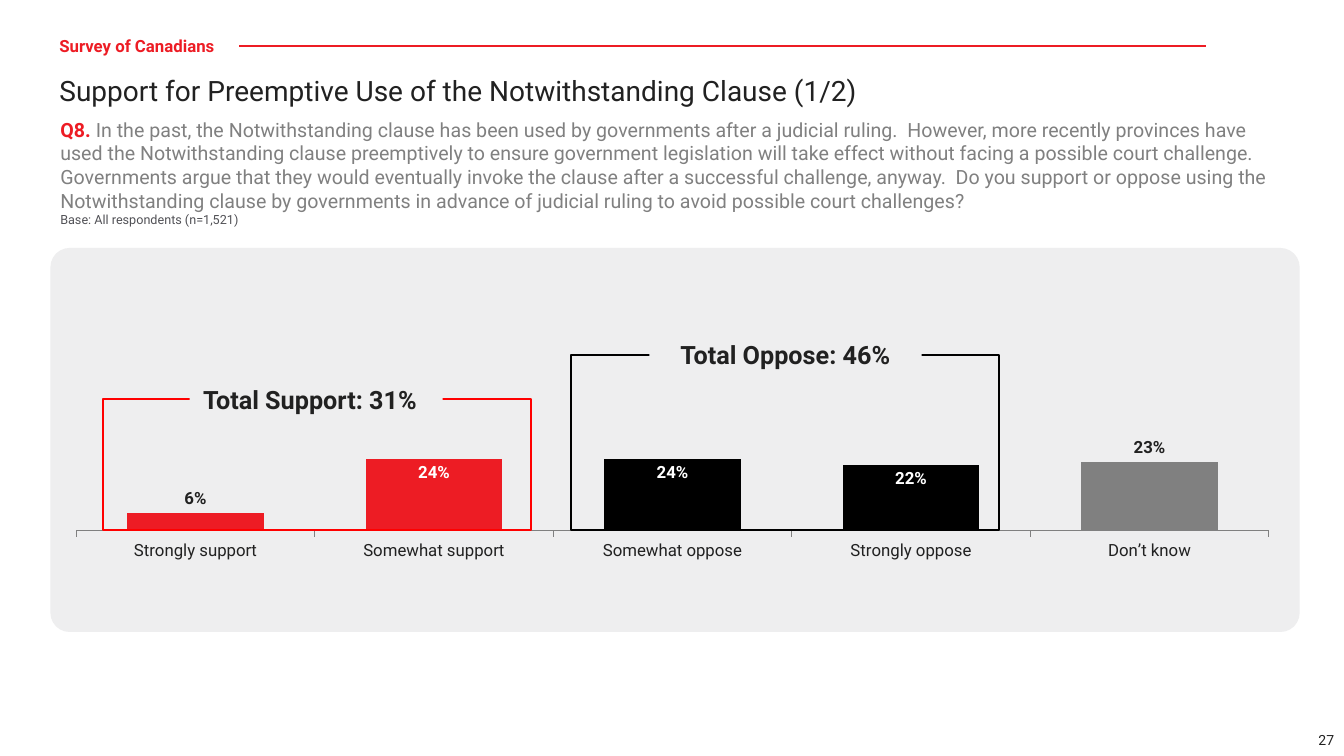
from lxml import etree
from pptx import Presentation
from pptx.chart.data import CategoryChartData
from pptx.dml.color import RGBColor
from pptx.enum.chart import XL_CHART_TYPE as CT, XL_LABEL_POSITION as LP, XL_TICK_LABEL_POSITION as TLP, XL_TICK_MARK as TM
from pptx.enum.shapes import MSO_CONNECTOR as MC, MSO_SHAPE as MS
from pptx.enum.text import MSO_ANCHOR as MA, PP_ALIGN as PA
from pptx.oxml import parse_xml
from pptx.oxml.ns import nsdecls, qn
from pptx.util import Inches, Pt

COLORS = {
    "brand": "ED1C24", "red": "FF0000", "black": "000000", "gray": "808080",
    "panel": "EEEEEF", "ink": "212121", "base": "515156", "white": "FFFFFF",
}
FONT = "Roboto"


class Deck:
    """Lengths are percent of the slide's width (x, w) and height (y, h)."""

    def __init__(self):
        self.prs = Presentation()
        self.prs.slide_width, self.prs.slide_height = Inches(13.33), Inches(7.5)
        self.s = self.prs.slides.add_slide(self.prs.slide_layouts[6])

    def color(self, name):
        return RGBColor.from_string(COLORS[name])

    def box(self, x, y, w, h):
        width, height = self.prs.slide_width, self.prs.slide_height
        return [int(v * full / 100) for v, full in zip((x, y, w, h), (width, height) * 2)]

    def style(self, font, size, color, bold=False):
        font.name, font.size, font.bold = FONT, Pt(size), bold
        font.color.rgb = self.color(color)

    def line(self, x1, y, x2, color):
        cx = self.s.shapes.add_connector(MC.STRAIGHT, *self.box(x1, y, x2, y))
        cx.line.color.rgb, cx.line.width = self.color(color), Pt(1.5)
        etree.SubElement(cx._element.spPr, qn("a:effectLst"))

    def shape(self, area, kind=MS.RECTANGLE, fill=None, line=None):
        sp = self.s.shapes.add_shape(kind, *self.box(*area))
        sp.shadow.inherit = False
        if fill:
            sp.fill.solid()
            sp.fill.fore_color.rgb = self.color(fill)
        else:
            sp.fill.background()
        if line:
            sp.line.color.rgb, sp.line.width = self.color(line), Pt(1.5)
        else:
            sp.line.fill.background()
        return sp

    def text(self, area, text, size, color="ink", bold=False, fill=None,
             align=PA.LEFT, anchor=MA.TOP, spacing=None):
        sp = self.shape(area, fill=fill) if fill else self.s.shapes.add_textbox(*self.box(*area))
        tf = sp.text_frame
        tf.word_wrap, tf.vertical_anchor = True, anchor
        p = tf.paragraphs[0]
        p.text, p.alignment, p.line_spacing = text, align, spacing
        self.style(p.font, size, color, bold)
        return tf

    def question(self, area, number, wording, base):
        tf = self.text(area, "", 14, "gray")
        p = tf.paragraphs[0]
        for text, color, bold in ((number, "brand", True), (wording, "gray", False)):
            r = p.add_run()
            r.text = text
            self.style(r.font, 14, color, bold)
        p = tf.add_paragraph()
        p.text = base
        self.style(p.font, 9, "base")

    def columns(self, area, bars, outside, top, plot):
        data = CategoryChartData(number_format="0%")
        data.categories = [name for name, _, _ in bars]
        data.add_series("Series 1", [value for _, value, _ in bars])
        chart = self.s.shapes.add_chart(CT.COLUMN_CLUSTERED, *self.box(*area), data).chart
        chart.has_legend = chart.has_title = False
        self.style(chart.font, 12, "ink")

        # Axes
        va, ca = chart.value_axis, chart.category_axis
        va.minimum_scale, va.maximum_scale = 0, top
        va.has_major_gridlines = va.visible = False
        ca.major_tick_mark, ca.tick_label_position = TM.OUTSIDE, TLP.LOW
        ca.format.line.color.rgb, ca.format.line.width = self.color("gray"), Pt(0.75)
        self.style(ca.tick_labels.font, 12, "ink")

        # Bars and their labels
        series_plot = chart.plots[0]
        series_plot.gap_width, series_plot.vary_by_categories = 75, False
        series = series_plot.series[0]
        series.format.fill.solid()
        series.format.fill.fore_color.rgb = self.color("brand")
        labels = series.data_labels
        labels.show_value, labels.position = True, LP.INSIDE_END
        labels.number_format, labels.number_format_is_linked = "0%", False
        self.style(labels.font, 12, "white", True)
        for i, (_, _, color) in enumerate(bars):
            point = series.points[i]
            point.format.fill.solid()
            point.format.fill.fore_color.rgb = self.color(color)
            if i in outside:
                self.style(point.data_label.font, 12, "ink", True)
                point.data_label.position = LP.OUTSIDE_END

        # Fixed inner plot area
        area_xml = chart._chartSpace.chart.plotArea
        for old in area_xml.findall(qn("c:layout")):
            area_xml.remove(old)
        sizes = "".join(f'<c:{k} val="{v}"/>' for k, v in zip("xywh", plot))
        area_xml.insert(0, parse_xml(
            f'<c:layout {nsdecls("c")}><c:manualLayout><c:layoutTarget val="inner"/>'
            f'<c:xMode val="edge"/><c:yMode val="edge"/>{sizes}</c:manualLayout></c:layout>'))


def main():
    d = Deck()

    # Header rule and page number
    d.line(6.75, 6.13, 89.72, "brand")
    d.text((90.7, 95.73, 9.3, 4.27), "27", 10, align=PA.RIGHT, anchor=MA.MIDDLE)

    # Panel and chart
    panel = d.shape((3.75, 32.8, 92.95, 50.8), MS.ROUNDED_RECTANGLE, "panel")
    panel.adjustments[0] = 0.05
    bars = [("Strongly support", 0.06, "brand"), ("Somewhat support", 0.24, "brand"),
            ("Somewhat oppose", 0.24, "black"), ("Strongly oppose", 0.22, "black"),
            ("Don’t know", 0.23, "gray")]
    d.columns((5.63, 37.87, 88.82, 47.6), bars, outside=(0, 4), top=0.8,
              plot=(0, 0.01, 1, 0.67))

    # Question and title
    d.question(
        (3.75, 14.93, 91.9, 19.07), "Q8. ",
        "In the past, the Notwithstanding clause has been used by governments after a judicial "
        "ruling.  However, more recently provinces have used the Notwithstanding clause "
        "preemptively to ensure government legislation will take effect without facing a possible "
        "court challenge.  Governments argue that they would eventually invoke the clause after a "
        "successful challenge, anyway.  Do you support or oppose using the Notwithstanding clause "
        "by governments in advance of judicial ruling to avoid possible court challenges?",
        "Base: All respondents (n=1,521)")
    d.text((3.68, 9.6, 86.05, 5.2), "Support for Preemptive Use of the Notwithstanding Clause (1/2)",
           20, spacing=0.9)

    # Brackets with totals on their top edges
    bottom, label_h = 70.13, 5.33
    totals = [("Total Support: 31%", "red", 7.65, 52.8, 14.1, 18.83, 0.22),
              ("Total Oppose: 46%", "black", 42.46, 46.93, 48.31, 20.26, 0.1)]
    for text, color, x, y, label_x, label_w, right in totals:
        d.shape((x, y, 31.88, bottom - y), line=color)
        tf = d.text((label_x, y - label_h / 2, label_w, label_h), text, 18, bold=True,
                    fill="panel", align=PA.CENTER, anchor=MA.MIDDLE)
        tf.margin_right = Inches(right)

    # Section name over the rule
    d.text((3.68, 4.4, 14.1, 3.73), "Survey of Canadians", 12, "brand", True, "white",
           anchor=MA.MIDDLE, spacing=0.9)

    d.prs.save("out.pptx")


if __name__ == "__main__":
    main()
